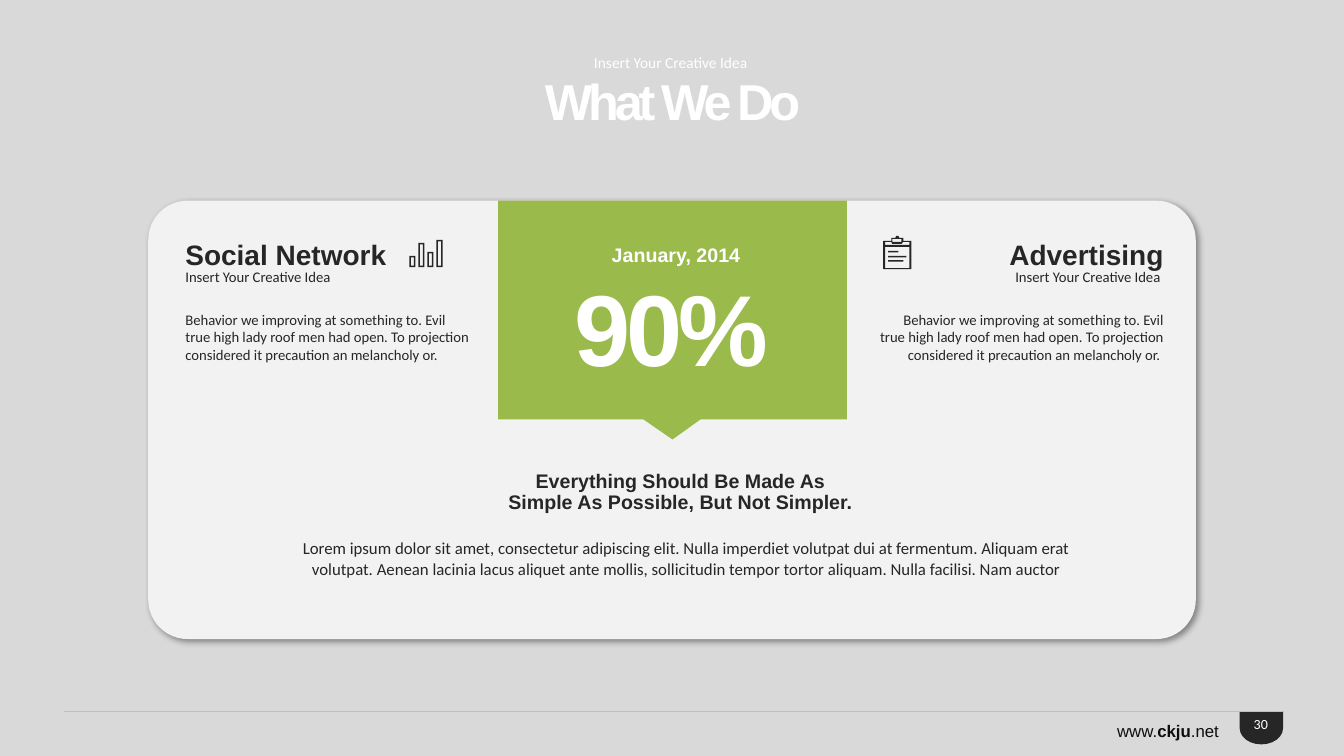
from dataclasses import dataclass

from lxml import etree
from pptx import Presentation
from pptx.dml.color import RGBColor
from pptx.enum.shapes import MSO_CONNECTOR, MSO_SHAPE
from pptx.enum.text import MSO_ANCHOR, PP_ALIGN
from pptx.oxml.ns import qn
from pptx.util import Inches, Pt

LEFT, CENTER, RIGHT = PP_ALIGN.LEFT, PP_ALIGN.CENTER, PP_ALIGN.RIGHT
TOP, MIDDLE = MSO_ANCHOR.TOP, MSO_ANCHOR.MIDDLE


@dataclass(frozen=True)
class Theme:
    backdrop = RGBColor.from_string("D9D9D9")
    panel = RGBColor.from_string("F2F2F2")
    green = RGBColor.from_string("9ABB4B")
    dark = RGBColor.from_string("262626")
    address = RGBColor.from_string("0D0D0D")
    rule = RGBColor.from_string("BFBFBF")
    white = RGBColor.from_string("FFFFFF")
    heading_font = "Arial"
    body_font = "Calibri"
    figure = 72
    title = 36
    heading = 20
    callout = 14
    text = 12
    tagline = 11
    small = 10.5
    page_number = 10


theme = Theme()

deck = Presentation()
deck.slide_width, deck.slide_height = Inches(13.33), Inches(7.5)
page = deck.slides.add_slide(deck.slide_layouts[6])
page.background.fill.solid()
page.background.fill.fore_color.rgb = theme.backdrop
shapes = page.shapes


def add_text(place, text, size, color, align=CENTER, heading=False, anchor=MIDDLE,
             spacing=1.0, tracking=0):
    """Add a one-paragraph text box; tracking is letter spacing in points."""
    box = shapes.add_textbox(*[Inches(length) for length in place])
    frame = box.text_frame
    frame.word_wrap = True
    frame.vertical_anchor = anchor
    para = frame.paragraphs[0]
    para.alignment = align
    para.line_spacing = spacing
    para.font.size = Pt(size)
    para.font.name = theme.heading_font if heading else theme.body_font
    para.font.bold = heading
    para.font.color.rgb = color
    span = para.add_run()
    span.text = text
    if tracking:
        span.font._element.set("spc", str(tracking * 100))
    return para


def add_outline(contours, color):
    """Fill closed contours as one shape; an inner contour cuts a hole."""
    points = [[(Inches(x), Inches(y)) for x, y in contour] for contour in contours]
    builder = shapes.build_freeform(*points[0][0], scale=1.0)
    for index, contour in enumerate(points):
        if index:
            builder.move_to(*contour[0])
        builder.add_line_segments(contour[1:], close=True)
    shape = builder.convert_to_shape()
    shape.shadow.inherit = False
    shape.fill.solid()
    shape.fill.fore_color.rgb = color
    shape.line.fill.background()


# Footer
address = add_text((10.95, 7.07, 1.27, 0.38), "www.", theme.text, theme.address,
                   heading=True, spacing=0.9)
address.font.bold = False
domain = address.add_run()
domain.text = "ckju"
domain.font.bold = True
address.add_run().text = ".net"

rule = shapes.add_connector(MSO_CONNECTOR.STRAIGHT, Inches(0.63), Inches(7.06),
                            Inches(12.73), Inches(7.06))
rule.line.color.rgb = theme.rule
rule.line.width = Pt(0.75)
etree.SubElement(rule._element.spPr, qn("a:effectLst"))

badge = shapes.add_shape(MSO_SHAPE.FLOWCHART_DELAY, Inches(12.35), Inches(7.01),
                         Inches(0.32), Inches(0.43))
badge.rotation = 90
panel = shapes.add_shape(MSO_SHAPE.ROUNDED_RECTANGLE, Inches(1.47), Inches(1.99),
                         Inches(10.39), Inches(4.35))
panel.adjustments[0] = 0.09
for shape, color in ((badge, theme.dark), (panel, theme.panel)):
    shape.shadow.inherit = False
    shape.fill.solid()
    shape.fill.fore_color.rgb = color
    shape.line.fill.background()

effects = panel._element.spPr.find(qn("a:effectLst"))
shadow = etree.SubElement(effects, qn("a:outerShdw"), blurRad=str(Pt(4)), dist=str(Pt(3)),
                          dir="2700000", algn="tl", rotWithShape="0")
shadow_color = etree.SubElement(shadow, qn("a:srgbClr"), val="000000")
etree.SubElement(shadow_color, qn("a:alpha"), val="40000")

# Green banner with its pointer
add_outline([[(4.94, 1.99), (8.4, 1.99), (8.4, 4.16), (6.95, 4.16), (6.67, 4.36),
              (6.38, 4.16), (4.94, 4.16)]], theme.green)

# Bar icon: a frame and its hole for each bar
bars = []
for index, bar_top in enumerate((2.54, 2.41, 2.5, 2.38)):
    left = 4.06 + 0.09 * index
    for inset in (0, 0.015):
        x1, x2 = left + inset, left + 0.06 - inset
        y1, y2 = bar_top + inset, 2.65 - inset
        bars.append([(x1, y1), (x2, y1), (x2, y2), (x1, y2)])
add_outline(bars, theme.dark)

# Clipboard icon: silhouette, holes, then written lines
clipboard = [
    [(8.76, 2.39), (8.84, 2.39), (8.84, 2.36), (8.88, 2.36), (8.89, 2.34), (8.91, 2.34),
     (8.92, 2.36), (8.96, 2.36), (8.96, 2.39), (9.04, 2.39), (9.04, 2.67), (8.76, 2.67)],
    [(8.78, 2.4), (8.84, 2.4), (8.85, 2.42), (8.94, 2.42), (8.96, 2.4), (9.02, 2.4),
     (9.02, 2.43), (8.78, 2.43)],
    [(8.85, 2.37), (8.94, 2.37), (8.94, 2.4), (8.85, 2.4)],
    [(8.78, 2.45), (9.02, 2.45), (9.02, 2.66), (8.78, 2.66)],
]
for line_top, right in ((2.49, 8.91), (2.54, 8.99), (2.58, 8.96)):
    bottom = line_top + 0.015
    clipboard.append([(8.81, line_top), (right, line_top), (right, bottom), (8.81, bottom)])
add_outline(clipboard, theme.dark)

# Title and page number
add_text((4.49, 0.73, 4.36, 0.61), "What We Do", theme.title, theme.white,
         heading=True, spacing=0.9, tracking=-3)
add_text((4.79, 0.52, 3.76, 0.21), "Insert Your Creative Idea ", theme.tagline, theme.white,
         spacing=0.9)
add_text((12.29, 7.08, 0.43, 0.21), "30", theme.page_number, theme.white)

# Banner and message
add_text((5.53, 2.78, 2.26, 1.07), "90%", theme.figure, theme.white,
         heading=True, spacing=0.9, tracking=-3)
add_text((5.74, 2.32, 1.93, 0.42), "January, 2014", theme.callout, theme.white, heading=True)
add_text((4.93, 4.51, 3.64, 0.75),
         "Everything Should Be Made As Simple As Possible, But Not Simpler.",
         theme.callout, theme.dark, heading=True, spacing=0.9)
add_text((2.81, 5.29, 8, 0.5),
         "Lorem ipsum dolor sit amet, consectetur adipiscing elit. Nulla imperdiet volutpat "
         "dui at fermentum. Aliquam erat volutpat. Aenean lacinia lacus aliquet ante mollis, "
         "sollicitudin tempor tortor aliquam. Nulla facilisi. Nam auctor",
         theme.text, theme.dark, anchor=TOP)

# Side columns share rows; the right one ends at a common edge
for name, align, ending in (("Social Network", LEFT, ""), ("Advertising", RIGHT, " ")):
    rows = (
        (2.33, 2.66, 0.39, name, theme.heading, True, MIDDLE, 1.0),
        (2.65, 1.89, 0.21, "Insert Your Creative Idea" + ending, theme.small, False, MIDDLE, 0.9),
        (3.03, 3.02, 1.05,
         "Behavior we improving at something to. Evil true high lady roof men had open. "
         "To projection considered it precaution an melancholy or." + ending,
         theme.small, False, TOP, 1.0),
    )
    for top, width, height, text, size, heading, anchor, spacing in rows:
        left = 1.74 if align == LEFT else 11.64 - width
        add_text((left, top, width, height), text, size, theme.dark, align, heading,
                 anchor, spacing)

deck.save("out.pptx")
